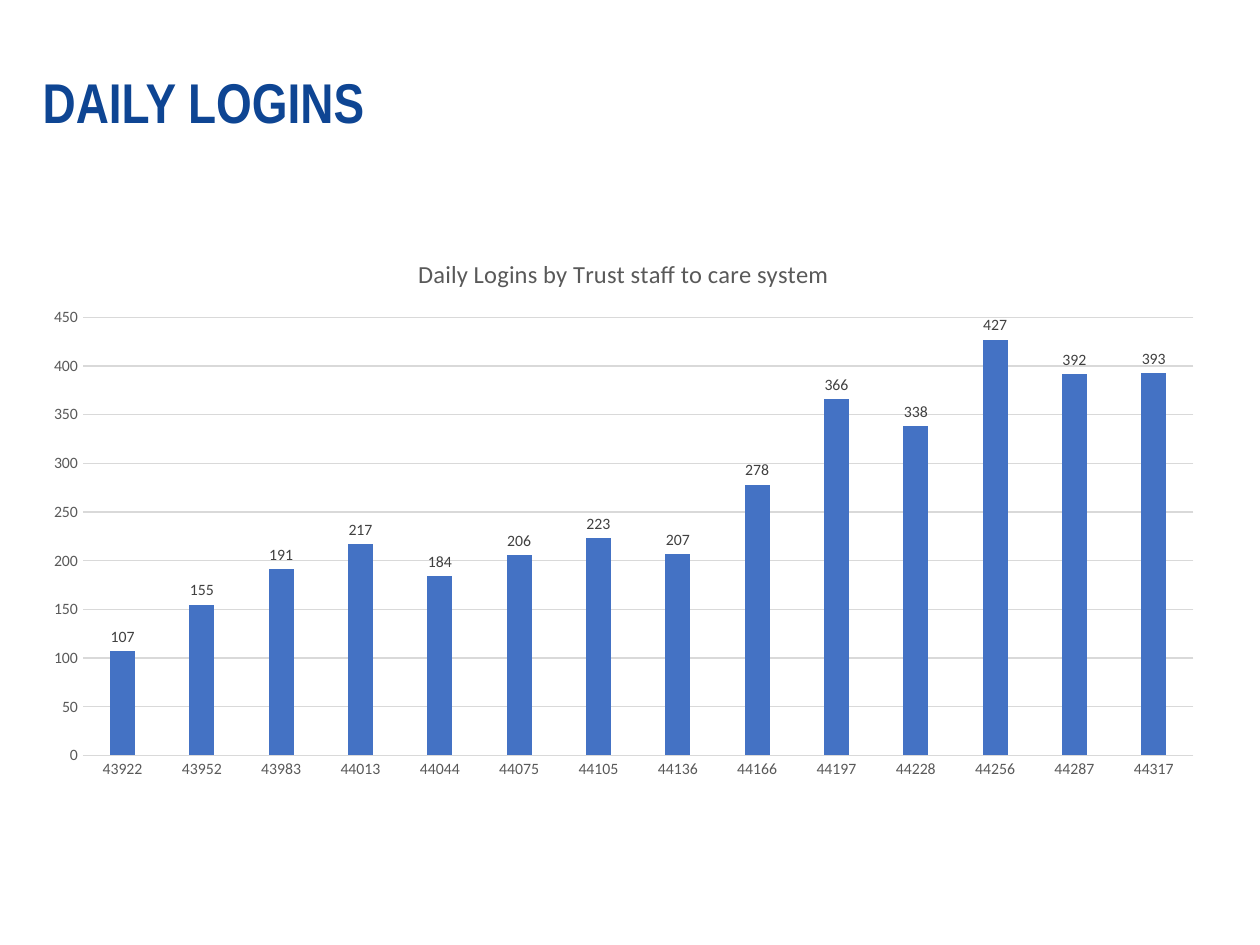
from pptx import Presentation
from pptx.chart.data import CategoryChartData
from pptx.dml.color import RGBColor
from pptx.enum.chart import XL_CHART_TYPE, XL_LABEL_POSITION, XL_TICK_MARK
from pptx.enum.text import MSO_ANCHOR
from pptx.util import Inches, Pt

LOGINS_BY_MONTH = {
    "43922": 107, "43952": 155, "43983": 191, "44013": 217, "44044": 184,
    "44075": 206, "44105": 223, "44136": 207, "44166": 278, "44197": 366,
    "44228": 338, "44256": 427, "44287": 392, "44317": 393,
}
NAVY, BLUE = "0E4593", "4472C4"
DARK_GREY, GREY, LIGHT_GREY = "404040", "595959", "D9D9D9"


def color(hex_string):
    return RGBColor.from_string(hex_string)


def style_font(font, size, hex_color, name="Calibri", bold=False):
    font.name = name
    font.size = Pt(size)
    font.bold = bold
    font.color.rgb = color(hex_color)


def style_line(line, hex_color):
    line.width = Pt(0.75)
    line.color.rgb = color(hex_color)


def add_title(slide, box, text):
    frame = slide.shapes.add_textbox(*box).text_frame
    frame.word_wrap = True
    frame.vertical_anchor = MSO_ANCHOR.MIDDLE
    run = frame.paragraphs[0].add_run()
    run.text = text
    style_font(run.font, 32, NAVY, "Arial Narrow", bold=True)


def style_axes(chart):
    for axis in (chart.category_axis, chart.value_axis):
        axis.major_tick_mark = axis.minor_tick_mark = XL_TICK_MARK.NONE
        style_font(axis.tick_labels.font, 9, GREY)
    chart.category_axis.has_major_gridlines = False
    style_line(chart.category_axis.format.line, LIGHT_GREY)

    value_axis = chart.value_axis
    value_axis.minimum_scale = 0
    value_axis.maximum_scale = 450
    value_axis.major_unit = 50
    value_axis.format.line.fill.background()
    style_line(value_axis.major_gridlines.format.line, LIGHT_GREY)


def add_logins_chart(slide, box, title):
    data = CategoryChartData()
    data.categories = list(LOGINS_BY_MONTH)
    data.add_series("Series 1", list(LOGINS_BY_MONTH.values()))
    chart = slide.shapes.add_chart(
        XL_CHART_TYPE.COLUMN_CLUSTERED, *box, data).chart
    style_font(chart.font, 10, "000000")
    chart.has_legend = False

    chart.has_title = True
    run = chart.chart_title.text_frame.paragraphs[0].add_run()
    run.text = title
    style_font(run.font, 14, GREY)
    chart.chart_title.include_in_layout = False
    style_axes(chart)

    plot = chart.plots[0]
    plot.vary_by_categories = False
    plot.gap_width = 219
    plot.overlap = -27
    series = plot.series[0]
    series.format.fill.solid()
    series.format.fill.fore_color.rgb = color(BLUE)

    labels = series.data_labels
    labels.show_value = True
    labels.position = XL_LABEL_POSITION.OUTSIDE_END
    style_font(labels.font, 9, DARK_GREY)


def main():
    presentation = Presentation()
    presentation.slide_width = Inches(10)
    presentation.slide_height = Inches(7.5)
    slide = presentation.slides.add_slide(presentation.slide_layouts[6])

    left, width = Inches(0.24), Inches(9.42)
    add_title(slide, (left, Inches(0.36), width, Inches(0.88)), "DAILY LOGINS")
    add_logins_chart(slide, (left, Inches(1.86), width, Inches(4.41)),
                     "Daily Logins by Trust staff to care system")
    presentation.save("out.pptx")


if __name__ == "__main__":
    main()
